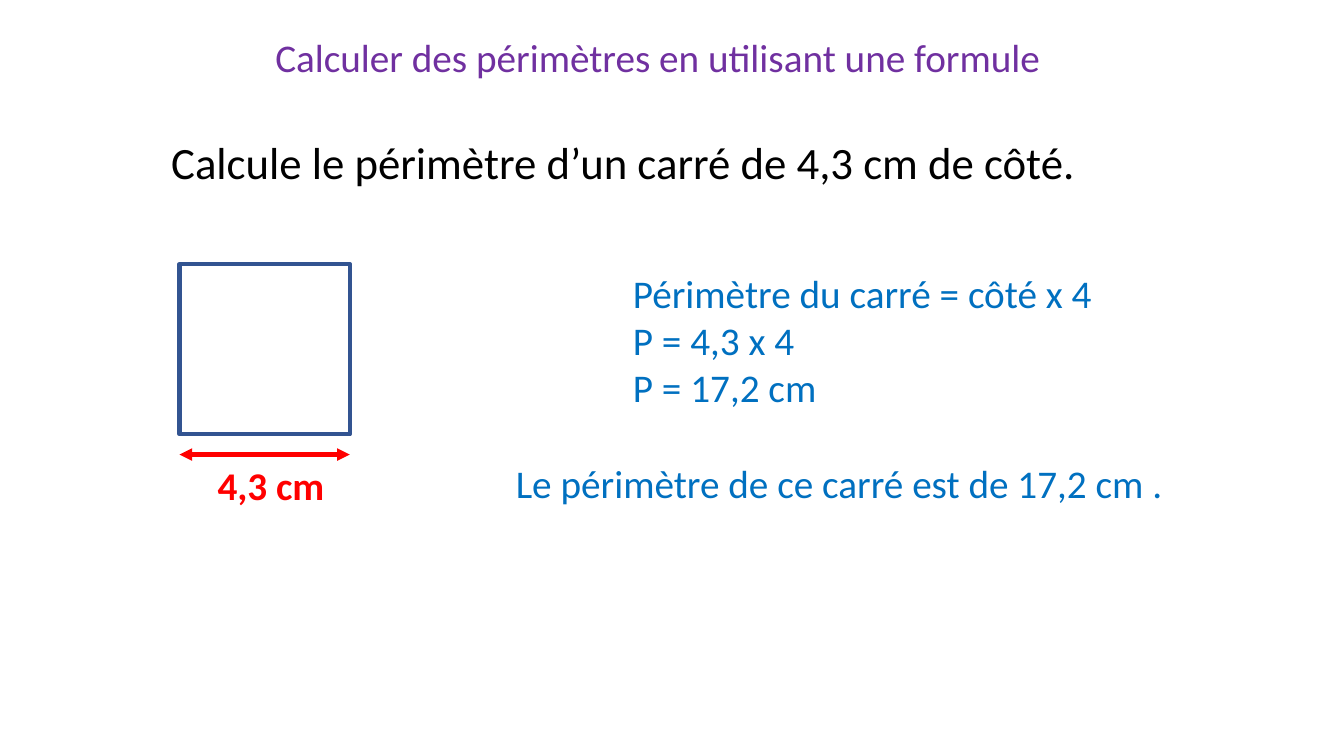
from lxml import etree
from pptx import Presentation
from pptx import util as u
from pptx.dml.color import RGBColor
from pptx.enum import shapes, text
from pptx.oxml.ns import qn

PURPLE = RGBColor(0x70, 0x30, 0xA0)
BLACK = RGBColor(0, 0, 0)
NAVY = RGBColor(0x32, 0x54, 0x91)
RED = RGBColor(0xFF, 0, 0)
BLUE = RGBColor(0, 0x70, 0xC0)


class LessonSlide:
    font = "Calibri"
    size = 28
    line_width = u.Pt(3)

    def __init__(self, presentation):
        self.slide = presentation.slides.add_slide(presentation.slide_layouts[5])

    def fill_text(self, shape, lines, color, size=size, bold=False,
                  align=text.PP_ALIGN.LEFT, spacing=1.0):
        frame = shape.text_frame
        frame.word_wrap = True
        frame.auto_size = text.MSO_AUTO_SIZE.SHAPE_TO_FIT_TEXT
        frame.vertical_anchor = text.MSO_ANCHOR.TOP
        frame.text = "\n".join(lines)
        for paragraph in frame.paragraphs:
            paragraph.alignment = align
            paragraph.line_spacing = spacing
            paragraph.font.name = self.font
            paragraph.font.size = u.Pt(size)
            paragraph.font.bold = bold
            paragraph.font.color.rgb = color

    def title(self, left, top, width, height, line, color):
        shape = self.slide.shapes.title
        shape.left, shape.top = u.Pt(left), u.Pt(top)
        shape.width, shape.height = u.Pt(width), u.Pt(height)
        self.fill_text(shape, [line], color, spacing=1.3)

    def text_box(self, left, top, width, height, lines, color, **style):
        shape = self.slide.shapes.add_textbox(
            u.Pt(left), u.Pt(top), u.Pt(width), u.Pt(height))
        self.fill_text(shape, lines, color, **style)

    def square(self, left, top, side, color):
        shape = self.slide.shapes.add_shape(
            shapes.MSO_SHAPE.RECTANGLE,
            u.Pt(left), u.Pt(top), u.Pt(side), u.Pt(side))
        shape.shadow.inherit = False
        shape.fill.background()
        shape.line.color.rgb = color
        shape.line.width = self.line_width

    def dimension(self, left, top, length, color):
        arrow = self.slide.shapes.add_connector(
            shapes.MSO_CONNECTOR.STRAIGHT,
            u.Pt(left), u.Pt(top), u.Pt(left + length), u.Pt(top))
        arrow.line.color.rgb = color
        arrow.line.width = self.line_width
        properties = arrow.element.spPr
        outline = properties.find(qn("a:ln"))
        for end in ("a:headEnd", "a:tailEnd"):
            etree.SubElement(outline, qn(end), type="triangle")
        etree.SubElement(properties, qn("a:effectLst"))


def main():
    presentation = Presentation()
    presentation.slide_width = u.Pt(960)
    presentation.slide_height = u.Pt(540)

    lesson = LessonSlide(presentation)
    lesson.title(189.4, 10.1, 566.6, 47.5,
                 "Calculer des périmètres en utilisant une formule", PURPLE)
    lesson.text_box(48.2, 92.9, 794.2, 46.1,
                    ["Calcule le périmètre d’un carré de 4,3 cm de côté."],
                    BLACK, size=32, align=text.PP_ALIGN.CENTER)

    square_left, square_top, side = 128.2, 188.6, 121.7
    lesson.square(square_left, square_top, side, NAVY)
    lesson.dimension(square_left, 324.7, side, RED)
    lesson.text_box(148.3, 326.2, 102.2, 41, ["4,3 cm"], RED, bold=True)

    lesson.text_box(445, square_top, 375.1, 108.7,
                    ["Périmètre du carré = côté x 4", "P = 4,3 x 4", "P = 17,2 cm"],
                    BLUE)
    lesson.text_box(361.4, 324.7, 527.8, 41,
                    ["Le périmètre de ce carré est de 17,2 cm ."], BLUE)

    presentation.save("out.pptx")


if __name__ == "__main__":
    main()
